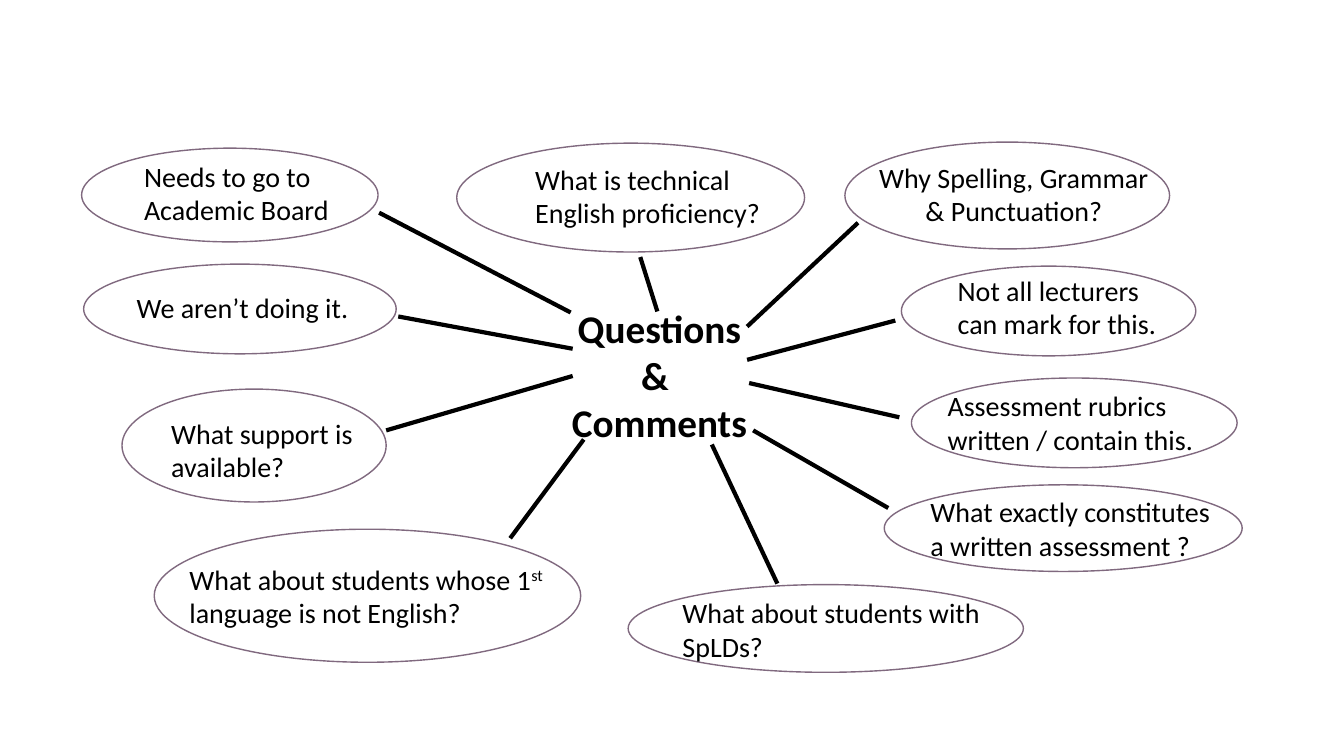
import pptx
import pptx.dml.color
import pptx.enum.shapes
import pptx.enum.text
import pptx.oxml
import pptx.util
from pptx.util import Inches

BLACK = pptx.dml.color.RGBColor(0x00, 0x00, 0x00)
MAUVE = pptx.dml.color.RGBColor(0x80, 0x69, 0x7F)
LEFT = pptx.enum.text.PP_ALIGN.LEFT
CENTER = pptx.enum.text.PP_ALIGN.CENTER

# Ellipse box, text box (left, top, width, height), alignment, text runs;
# every second run is superscript
BUBBLES = [
    ((0.81, 1.47, 2.94, 0.93), (1.33, 1.53, 2.59, 0.77), LEFT,
     ["Needs to go to Academic Board"]),
    ((4.53, 1.42, 3.45, 1.08), (5.21, 1.56, 2.78, 0.77), LEFT,
     ["What is technical English proficiency?"]),
    ((8.38, 1.41, 3.22, 1.06), (8.59, 1.54, 2.93, 0.77), CENTER,
     ["Why Spelling, Grammar & Punctuation?"]),
    ((0.83, 2.62, 3.1, 0.89), (0.81, 2.83, 3.19, 0.44), CENTER,
     ["We aren’t doing it."]),
    ((8.94, 2.64, 2.92, 0.89), (9.4, 2.66, 2.4, 0.77), LEFT,
     ["Not all lecturers can mark for this."]),
    ((1.21, 3.86, 2.62, 1.12), (1.6, 4.08, 2.73, 0.77), LEFT,
     ["What support is available?"]),
    ((9.04, 3.75, 3.23, 0.89), (9.3, 3.81, 3.03, 0.77), LEFT,
     ["Assessment rubrics written / contain this."]),
    ((8.77, 4.81, 3.55, 0.86), (9.13, 4.86, 2.99, 0.77), LEFT,
     ["What exactly constitutes a written assessment ?"]),
    ((1.53, 5.25, 4.23, 1.32), (1.78, 5.53, 3.8, 0.77), LEFT,
     ["What about students whose 1", "st", " language is not English?"]),
    ((6.23, 5.8, 3.92, 0.87), (6.67, 5.86, 3.17, 0.77), LEFT,
     ["What about students with SpLDs?"]),
]

# Spoke ends: x1, y1, x2, y2
SPOKES = [
    (3.76, 2.11, 5.66, 3.1),
    (6.52, 3.09, 6.35, 2.55),
    (7.41, 3.24, 8.51, 2.21),
    (3.95, 3.14, 5.68, 3.46),
    (7.41, 3.57, 8.88, 3.18),
    (3.83, 4.27, 5.68, 3.73),
    (7.43, 3.8, 8.92, 4.14),
    (8.81, 5.04, 7.47, 4.27),
    (5.06, 5.34, 5.79, 4.36),
    (7.71, 5.79, 7.06, 4.41),
]


class MindMap:
    """Holds the slide and the look of its elements."""
    font, title_size, text_size = "Calibri", 28, 20
    outline, spoke_width = 1, 3

    def __init__(self, prs):
        self.s = prs.slides.add_slide(prs.slide_layouts[5])

    def style(self, tf, size, bold, align):
        tf.word_wrap = True
        tf.auto_size = pptx.enum.text.MSO_AUTO_SIZE.SHAPE_TO_FIT_TEXT
        tf.vertical_anchor = pptx.enum.text.MSO_ANCHOR.TOP
        for p in tf.paragraphs:
            p.alignment = align
            for r in p.runs:
                r.font.name = self.font
                r.font.size = pptx.util.Pt(size)
                r.font.bold = bold
                r.font.color.rgb = BLACK

    def title(self, box, text):
        sp = self.s.shapes.title
        sp.left, sp.top, sp.width, sp.height = map(Inches, box)
        sp.text_frame.text = text
        self.style(sp.text_frame, self.title_size, True, CENTER)

    def ellipse(self, box):
        sp = self.s.shapes.add_shape(
            pptx.enum.shapes.MSO_SHAPE.OVAL, *map(Inches, box))
        sp.shadow.inherit = False
        sp.fill.background()
        sp.line.color.rgb = MAUVE
        sp.line.width = pptx.util.Pt(self.outline)

    def text(self, box, align, runs):
        tf = self.s.shapes.add_textbox(*map(Inches, box)).text_frame
        p = tf.paragraphs[0]
        for i, part in enumerate(runs):
            r = p.add_run()
            r.text = part
            if i % 2:
                r._r.get_or_add_rPr().set("baseline", "30000")
        self.style(tf, self.text_size, False, align)

    def spoke(self, ends):
        line = self.s.shapes.add_connector(
            pptx.enum.shapes.MSO_CONNECTOR.STRAIGHT, *map(Inches, ends))
        line.line.color.rgb = BLACK
        line.line.width = pptx.util.Pt(self.spoke_width)
        line._element.spPr.append(pptx.oxml.parse_xml(
            '<a:effectLst xmlns:a='
            '"http://schemas.openxmlformats.org/drawingml/2006/main"/>'))


def main():
    prs = pptx.Presentation()
    prs.slide_width, prs.slide_height = Inches(13.33), Inches(7.5)
    mind_map = MindMap(prs)

    # Central topic
    mind_map.title((5.13, 2.97, 2.82, 1.51), "Questions\n& \nComments")

    # Bubbles around it
    for oval, box, align, runs in BUBBLES:
        mind_map.ellipse(oval)
        mind_map.text(box, align, runs)

    # Spokes
    for ends in SPOKES:
        mind_map.spoke(ends)

    prs.save("out.pptx")


if __name__ == "__main__":
    main()
